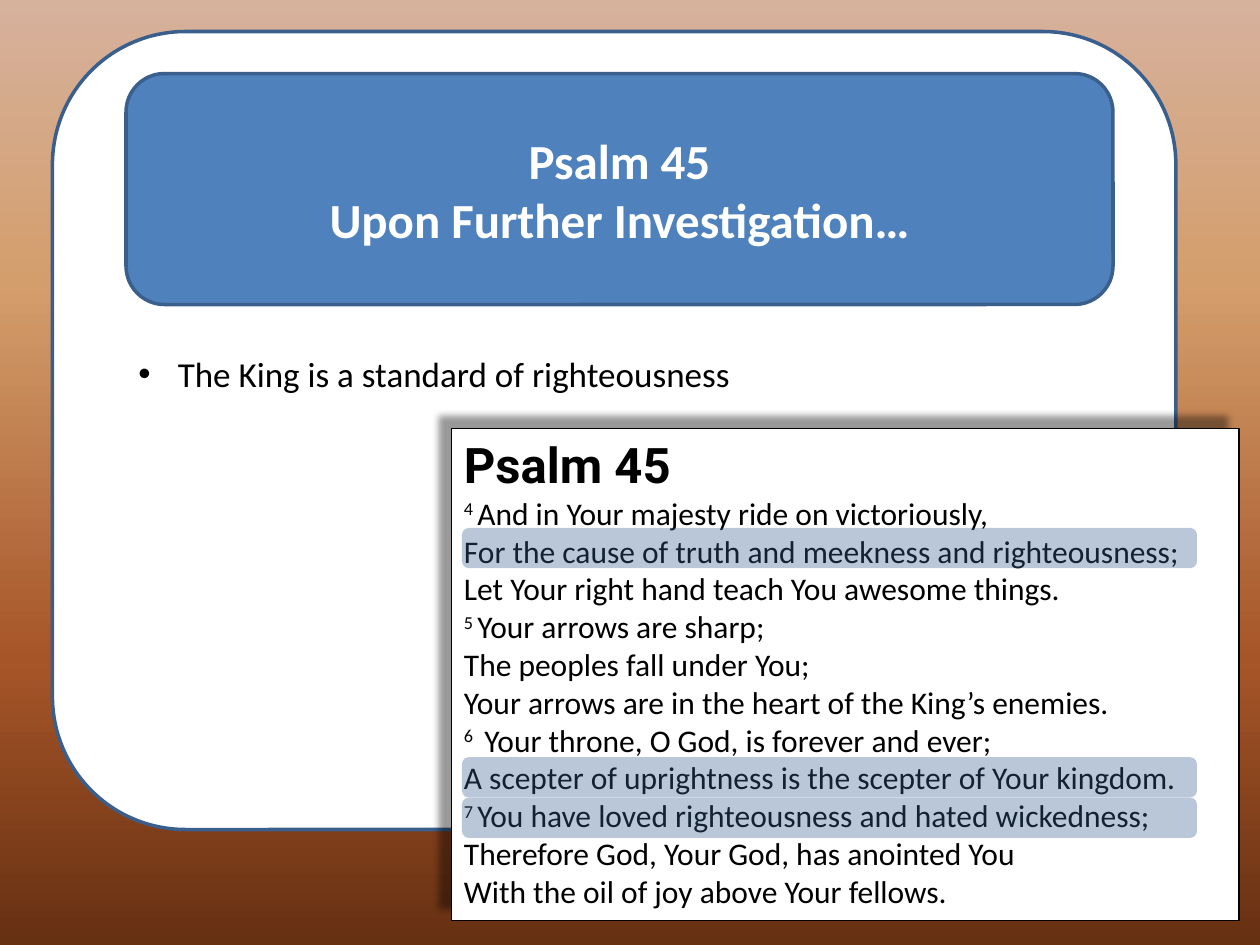
import lxml.etree
import pptx
import pptx.dml.color
import pptx.enum.shapes
import pptx.enum.text
import pptx.oxml.ns
import pptx.util
from dataclasses import dataclass

Pt = pptx.util.Pt
qn = pptx.oxml.ns.qn


@dataclass(frozen=True)
class Theme:
    white: str = "FFFFFF"
    black: str = "000000"
    blue: str = "4F81BD"
    outline: str = "3A5F8C"
    highlight: str = "376092"
    background: tuple = ((0, "D6B19C"), (30, "D49E6C"), (70, "A65528"), (100, "663012"))
    body_font: str = "Calibri"
    heading_font: str = "Roboto"
    title_size: int = 28
    bullet_size: int = 20
    verse_size: int = 18


def color(value):
    return pptx.dml.color.RGBColor.from_string(value)


def add_element(parent, tag, **attributes):
    element = lxml.etree.SubElement(parent, qn(tag))
    for name, value in attributes.items():
        element.set(name, str(value))
    return element


def add_color(parent, value, opacity=100):
    element = add_element(parent, "a:srgbClr", val=value)
    if opacity < 100:
        add_element(element, "a:alpha", val=opacity * 1000)


class SlideBuilder:
    def __init__(self, slide, theme):
        self.slide = slide
        self.theme = theme

    def gradient_background(self):
        fill = self.slide.background.fill
        fill.gradient()
        fill.gradient_angle = 270
        stops = self.slide.element.find(".//" + qn("a:gsLst"))
        for stop in list(stops):
            stops.remove(stop)
        for position, value in self.theme.background:
            add_color(add_element(stops, "a:gs", pos=position * 1000), value)

    def rounded_box(self, left, top, width, height, fill, line=None, opacity=100):
        shape = self.slide.shapes.add_shape(
            pptx.enum.shapes.MSO_SHAPE.ROUNDED_RECTANGLE,
            Pt(left), Pt(top), Pt(width), Pt(height))
        shape.shadow.inherit = False
        shape.fill.solid()
        shape.fill.fore_color.rgb = color(fill)
        if opacity < 100:
            fill_color = shape.element.spPr.find(qn("a:solidFill"))[0]
            add_element(fill_color, "a:alpha", val=opacity * 1000)
        if line:
            shape.line.color.rgb = color(line)
            shape.line.width = Pt(2)
        else:
            shape.line.fill.background()
        return shape

    def text_box(self, left, top, width, height):
        shape = self.slide.shapes.add_textbox(Pt(left), Pt(top), Pt(width), Pt(height))
        shape.text_frame.word_wrap = True
        shape.text_frame.auto_size = pptx.enum.text.MSO_AUTO_SIZE.SHAPE_TO_FIT_TEXT
        return shape

    def style(self, paragraph, size, font=None, text_color=None, bold=False):
        paragraph.font.size = Pt(size)
        paragraph.font.name = font or self.theme.body_font
        paragraph.font.bold = bold
        paragraph.font.color.rgb = color(text_color or self.theme.black)

    def title(self, lines, left, top, width, height):
        shape = self.rounded_box(left, top, width, height, self.theme.blue, self.theme.outline)
        frame = shape.text_frame
        frame.vertical_anchor = pptx.enum.text.MSO_ANCHOR.MIDDLE
        frame.text = "\n".join(lines)
        for paragraph in frame.paragraphs:
            paragraph.alignment = pptx.enum.text.PP_ALIGN.CENTER
            self.style(paragraph, self.theme.title_size, text_color=self.theme.white, bold=True)

    def bullet(self, text, left, top, width, height, indent=22.5):
        paragraph = self.text_box(left, top, width, height).text_frame.paragraphs[0]
        paragraph.text = text
        properties = paragraph._p.get_or_add_pPr()
        properties.set("marL", str(Pt(indent)))
        properties.set("indent", str(-Pt(indent)))
        add_element(properties, "a:buFont", typeface="Arial")
        add_element(properties, "a:buChar", char="•")
        self.style(paragraph, self.theme.bullet_size)

    def scripture(self, heading, verses, left, top, width, height):
        """Shadowed card; each verse line is a (superscript number, text) pair."""
        shape = self.text_box(left, top, width, height)
        shape.fill.solid()
        shape.fill.fore_color.rgb = color(self.theme.white)
        shape.line.color.rgb = color(self.theme.black)
        shape.line.width = Pt(0.75)
        effects = add_element(shape.element.spPr, "a:effectLst")
        shadow = add_element(effects, "a:outerShdw", blurRad=Pt(4), dist=Pt(10),
                             dir=225 * 60000, algn="br", rotWithShape=0)
        add_color(shadow, self.theme.black, opacity=40)

        frame = shape.text_frame
        paragraph = frame.paragraphs[0]
        paragraph.text = heading
        self.style(paragraph, self.theme.title_size, self.theme.heading_font, bold=True)
        for number, text in verses:
            paragraph = frame.add_paragraph()
            self.style(paragraph, self.theme.verse_size)
            if number:
                run = paragraph.add_run()
                run.text = f"{number}\N{NO-BREAK SPACE}"
                run._r.get_or_add_rPr().set("baseline", "30000")
            paragraph.add_run().text = text

    def highlight(self, top):
        self.rounded_box(264, top, 420, 23, self.theme.highlight, opacity=35)


VERSES = [
    ("4", "And in Your majesty ride on victoriously,"),
    ("", "For the cause of truth and meekness and righteousness;"),
    ("", "Let Your right hand teach You awesome things."),
    ("5", "Your arrows are sharp;"),
    ("", "The peoples fall under You;"),
    ("", "Your arrows are in the heart of the King’s enemies."),
    ("6", " Your throne, O God, is forever and ever;"),
    ("", "A scepter of uprightness is the scepter of Your kingdom."),
    ("7", "You have loved righteousness and hated wickedness;"),
    ("", "Therefore God, Your God, has anointed You"),
    ("", "With the oil of joy above Your fellows."),
]


def main():
    presentation = pptx.Presentation()
    presentation.slide_width, presentation.slide_height = Pt(720), Pt(540)
    theme = Theme()
    builder = SlideBuilder(
        presentation.slides.add_slide(presentation.slide_layouts[6]), theme)

    builder.gradient_background()
    builder.rounded_box(30, 18, 642, 456, theme.white, theme.outline)
    builder.title(["Psalm 45", "Upon Further Investigation…"], 72, 42, 564, 132)
    builder.bullet("The King is a standard of righteousness", 72, 198, 450, 31.5)
    builder.scripture("Psalm 45", VERSES, 258, 245, 450, 281)
    for top in (301.7, 432.7, 455.8):
        builder.highlight(top)

    presentation.save("out.pptx")


if __name__ == "__main__":
    main()
